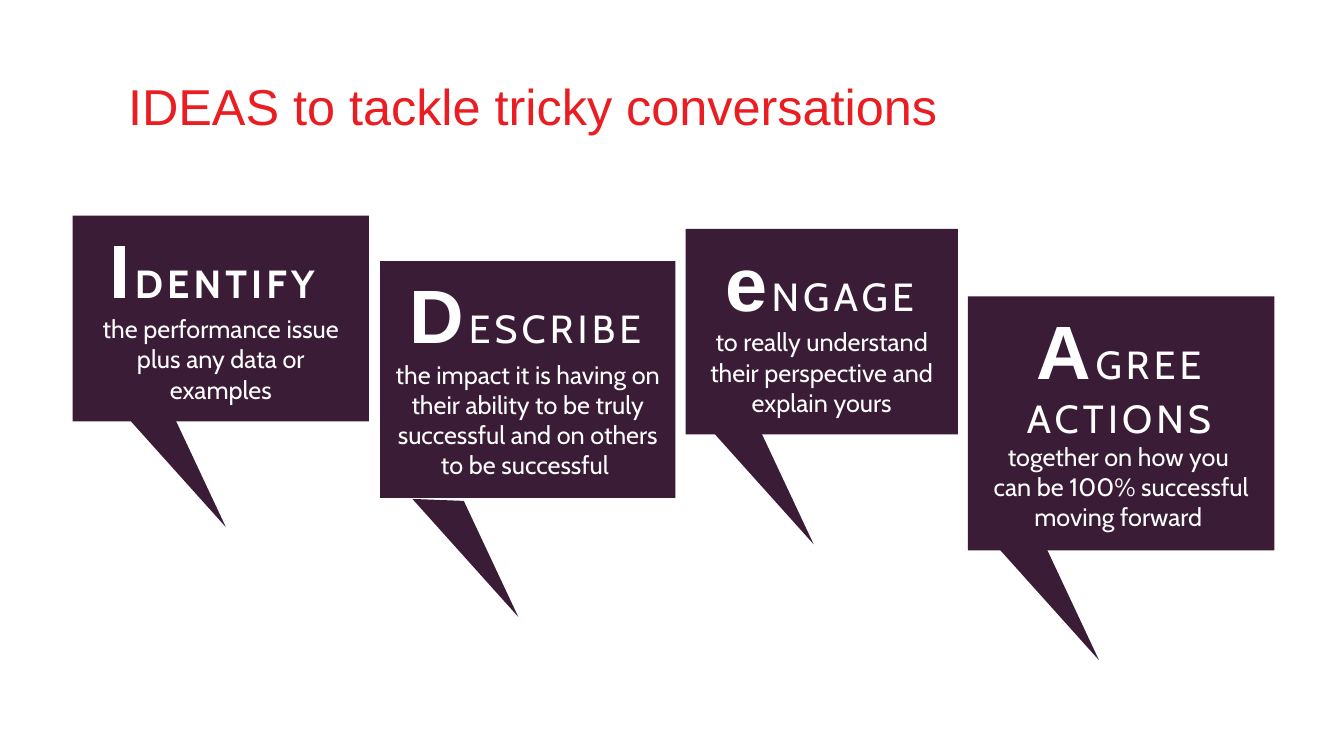
import pptx
import pptx.util
import pptx.dml.color
import pptx.enum.shapes
import pptx.enum.text

Inches = pptx.util.Inches
RGBColor = pptx.dml.color.RGBColor

PLUM = RGBColor(0x3B, 0x1C, 0x36)
RED = RGBColor(0xE9, 0x1D, 0x22)
WHITE = RGBColor(0xFF, 0xFF, 0xFF)

# Tail corners, measured from the tail's upper left corner
TAIL_CORNERS = [(0.51, 0.02), (1.05, 1.17)]

# Box (left, top, width, height), tail corner, initial, rest of heading,
# heading style, explanation
STEPS = [
    ((0.72, 2.14, 2.94, 2.04), (1.19, 4.06), "I", "DENTIFY ", True,
     "the performance issue plus any data or examples"),
    ((3.77, 2.59, 2.93, 2.35), (4.09, 4.95), "D", "ESCRIBE", False,
     "the impact it is having on their ability to be truly "
     "successful and on others to be successful "),
    ((6.8, 2.27, 2.7, 2.04), (7.02, 4.23), "e", "NGAGE", False,
     "to really understand their perspective and explain yours"),
    ((9.6, 2.94, 3.04, 2.52), (9.85, 5.38), "A", "GREE ACTIONS", False,
     "together on how you \ncan be 100% successful moving forward "),
]


def add_text(para, text, font="Cabin", size=18, color=WHITE, bold=False, spacing=0):
    """Add text to a paragraph; each newline becomes a line break."""
    for number, line in enumerate(text.split("\n")):
        if number:
            para.add_line_break()
        span = para.add_run()
        span.text = line
        span.font.name = font
        span.font.size = pptx.util.Pt(size)
        span.font.bold = bold
        span.font.color.rgb = color
        if spacing:
            span.font._element.set("spc", str(spacing * 100))


class SlideBuilder:
    def __init__(self, deck):
        self.fill = PLUM
        self.heading_font = "Arial"
        self.page = deck.slides.add_slide(deck.slide_layouts[5])

    def paint(self, shape):
        shape.shadow.inherit = False
        shape.fill.solid()
        shape.fill.fore_color.rgb = self.fill
        shape.line.fill.background()

    def set_frame(self, frame, anchor, margins):
        frame.word_wrap = True
        frame.vertical_anchor = anchor
        (frame.margin_left, frame.margin_top,
         frame.margin_right, frame.margin_bottom) = map(Inches, margins)

    def title(self, text, left, top, width, height):
        title = self.page.shapes.title
        title.left, title.top = Inches(left), Inches(top)
        title.width, title.height = Inches(width), Inches(height)
        frame = title.text_frame
        self.set_frame(frame, pptx.enum.text.MSO_ANCHOR.MIDDLE, (0, 0, 0, 0))
        para = frame.paragraphs[0]
        para.alignment = pptx.enum.text.PP_ALIGN.LEFT
        add_text(para, text, font=self.heading_font, size=36, color=RED)

    def box(self, place, initial, heading, bold, explanation):
        box = self.page.shapes.add_shape(
            pptx.enum.shapes.MSO_SHAPE.RECTANGLE, *map(Inches, place))
        self.paint(box)
        frame = box.text_frame
        self.set_frame(frame, pptx.enum.text.MSO_ANCHOR.TOP, (0.13, 0.07, 0.13, 0.16))
        frame.auto_size = pptx.enum.text.MSO_AUTO_SIZE.SHAPE_TO_FIT_TEXT
        para = frame.paragraphs[0]
        para.alignment = pptx.enum.text.PP_ALIGN.CENTER
        add_text(para, initial, font=self.heading_font, size=54, bold=True, spacing=3)
        add_text(para, heading, size=28, bold=bold, spacing=3)
        para.add_line_break()
        add_text(para, explanation)

    def tail(self, left, top):
        outline = self.page.shapes.build_freeform(Inches(left), Inches(top))
        outline.add_line_segments(
            [(Inches(left + x), Inches(top + y)) for x, y in TAIL_CORNERS], close=True)
        self.paint(outline.convert_to_shape())


def main():
    deck = pptx.Presentation()
    deck.slide_width, deck.slide_height = Inches(13.33), Inches(7.5)
    builder = SlideBuilder(deck)

    # Title
    builder.title("IDEAS to tackle tricky conversations", 1.27, 0.69, 9.61, 0.7)

    # Speech bubbles: boxes and their tails
    for place, corner, initial, heading, bold, explanation in STEPS:
        builder.box(place, initial, heading, bold, explanation)
        builder.tail(*corner)

    deck.save("out.pptx")


if __name__ == "__main__":
    main()
